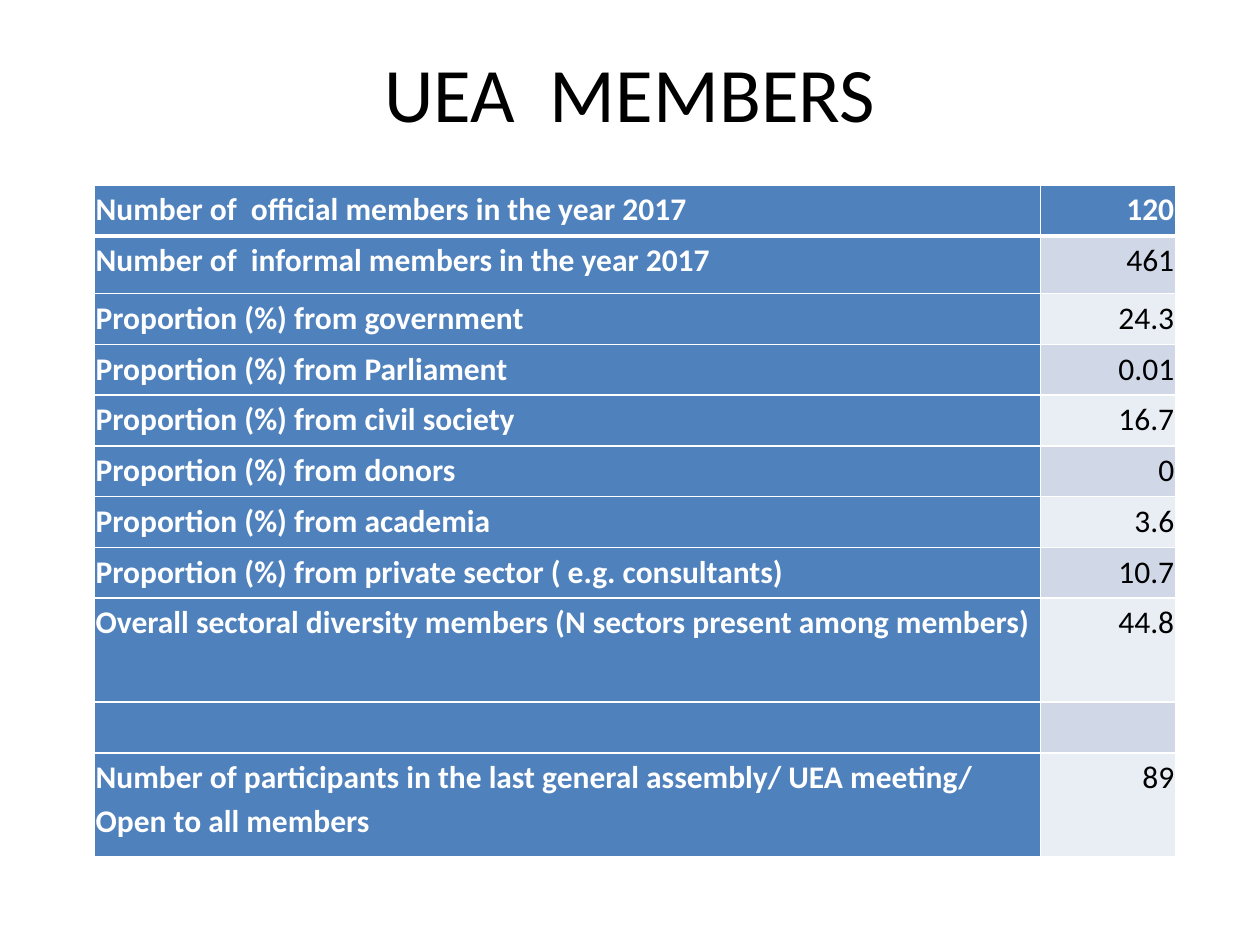
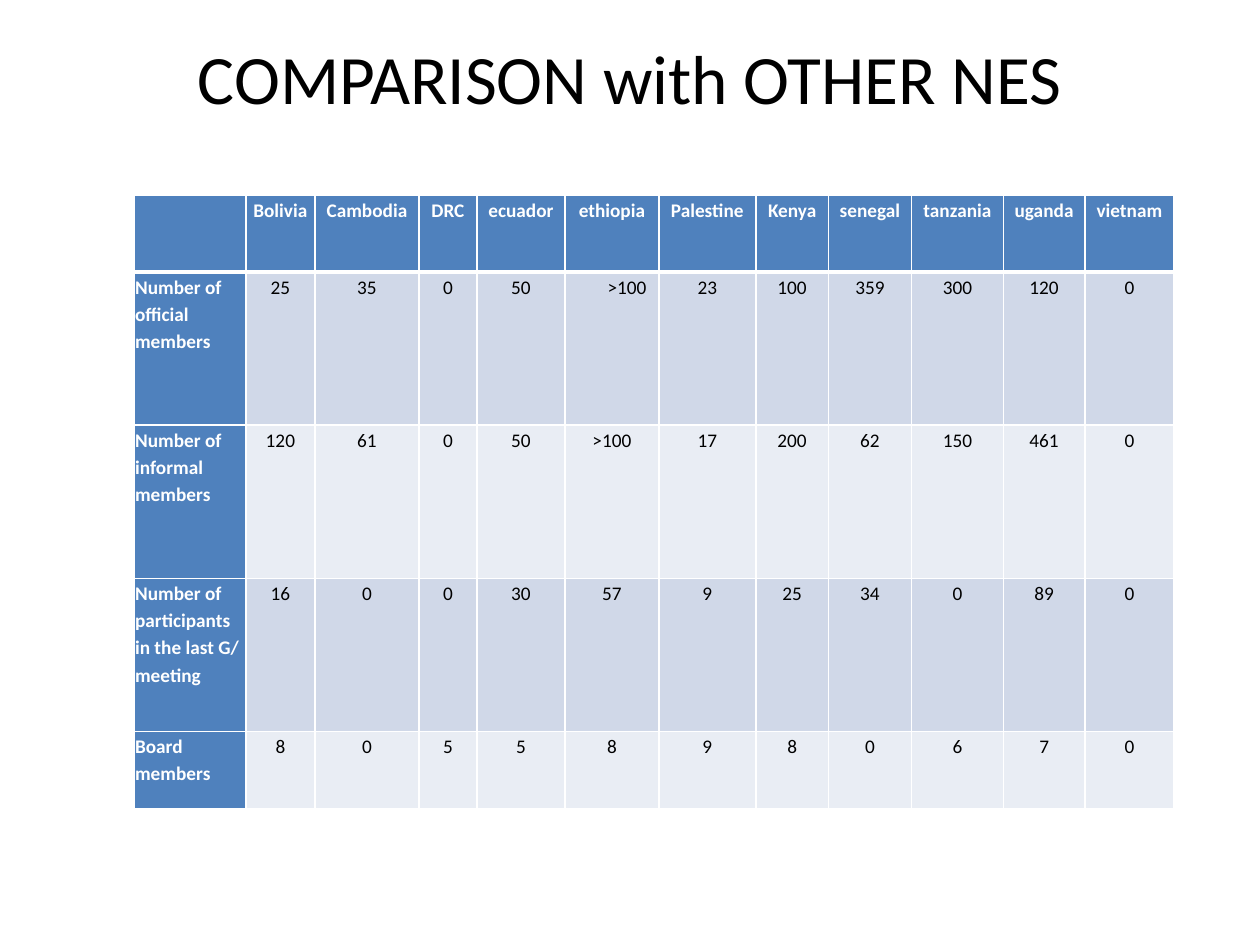
import dataclasses

import lxml.etree
import pptx
import pptx.dml.color
import pptx.enum.text
import pptx.oxml.ns
import pptx.util

Pt = pptx.util.Pt
ALIGN = pptx.enum.text.PP_ALIGN


@dataclasses.dataclass(frozen=True)
class Theme:
    font: str = "Calibri"
    ink: str = "000000"
    paper: str = "FFFFFF"
    heading_fill: str = "4F81BD"
    bands: tuple = ("D0D8E8", "E9EDF4")
    title_size: float = 44
    long_title_size: float = 39.6
    members_size: float = 18
    comparison_size: float = 11
    rule: float = 1
    header_rule: float = 3
    cell_inset: float = 0.7
    line_spacing: float = 1.15
    space_after: float = 10


def rgb(value):
    return pptx.dml.color.RGBColor.from_string(value)


def put_text(frame, text, *, font, size, color, bold=False, align=ALIGN.LEFT,
             line_spacing=None, space_after=None):
    paragraph = frame.paragraphs[0]
    paragraph.alignment = align
    paragraph.line_spacing = line_spacing
    if space_after is not None:
        paragraph.space_after = Pt(space_after)
    run = paragraph.add_run()
    run.text = text
    run.font.name = font
    run.font.size = Pt(size)
    run.font.bold = bold
    run.font.color.rgb = rgb(color)


class Deck:
    def __init__(self, theme):
        self.theme = theme
        self.presentation = pptx.Presentation()
        self.presentation.slide_width = Pt(720)
        self.presentation.slide_height = Pt(540)
        self.slide = None

    def add_slide(self, heading, size, height):
        layout = self.presentation.slide_layouts.get_by_name("Title Only")
        self.slide = self.presentation.slides.add_slide(layout)
        title = self.slide.shapes.title
        title.left, title.top = Pt(36), Pt(21.6)
        title.width, title.height = Pt(648), Pt(height)
        frame = title.text_frame
        frame.word_wrap = True
        frame.auto_size = pptx.enum.text.MSO_AUTO_SIZE.NONE
        frame.vertical_anchor = pptx.enum.text.MSO_ANCHOR.MIDDLE
        put_text(frame, heading, font=self.theme.font, size=size,
                 color=self.theme.ink, align=ALIGN.CENTER)

    def add_borders(self, cell, row):
        properties = cell._tc.get_or_add_tcPr()
        tag = pptx.oxml.ns.qn
        heavy = {0: "lnB", 1: "lnT"}.get(row)
        for side in ("lnL", "lnR", "lnT", "lnB"):
            weight = self.theme.header_rule if side == heavy else self.theme.rule
            line = lxml.etree.SubElement(properties, tag(f"a:{side}"), w=str(Pt(weight)))
            fill = lxml.etree.SubElement(line, tag("a:solidFill"))
            lxml.etree.SubElement(fill, tag("a:srgbClr"), val=self.theme.paper)

    def format_cell(self, cell, text, row, column, size, align):
        theme = self.theme
        heading = row == 0 or column == 0
        cell.margin_left = cell.margin_right = Pt(theme.cell_inset)
        cell.margin_top = cell.margin_bottom = Pt(0)
        self.add_borders(cell, row)
        cell.fill.solid()
        cell.fill.fore_color.rgb = rgb(
            theme.heading_fill if heading else theme.bands[(row - 1) % 2])
        if text:
            put_text(cell.text_frame, text, font=theme.font, size=size,
                     color=theme.paper if heading else theme.ink, bold=heading,
                     align=ALIGN.LEFT if column == 0 else align,
                     line_spacing=theme.line_spacing, space_after=theme.space_after)

    def add_table(self, records, left, top, widths, heights, size, align):
        table = self.slide.shapes.add_table(
            len(heights), len(widths), Pt(left), Pt(top),
            Pt(sum(widths)), Pt(sum(heights))).table
        for column, width in zip(table.columns, widths):
            column.width = Pt(width)
        for row, height in zip(table.rows, heights):
            row.height = Pt(height)
        for row, record in enumerate(records):
            for column, text in enumerate(record):
                self.format_cell(table.cell(row, column), text, row, column, size, align)
        return table


MEMBERS = [
    ("Number of  official members in the year 2017", "120"),
    ("Number of  informal members in the year 2017", "461"),
    ("Proportion (%) from government", "24.3"),
    ("Proportion (%) from Parliament", "0.01"),
    ("Proportion (%) from civil society", "16.7"),
    ("Proportion (%) from donors", "0"),
    ("Proportion (%) from academia", "3.6"),
    ("Proportion (%) from private sector ( e.g. consultants)", "10.7"),
    ("Overall sectoral diversity members (N sectors present among members)", "44.8"),
    ("", ""),
    ("Number of participants in the last general assembly/ UEA meeting/ "
     "Open to all members", "89"),
]

COMPARISON = [
    ("", "Bolivia", "Cambodia", "DRC", "ecuador", "ethiopia", "Palestine",
     "Kenya", "senegal", "tanzania", "uganda", "vietnam"),
    ("Number of official members", "25", "35", "0", "50", ">100", "23",
     "100", "359", "300", "120", "0"),
    ("Number of informal members", "120", "61", "0", "50", ">100", "17",
     "200", "62", "150", "461", "0"),
    ("Number of participants in the last G/ meeting", "16", "0", "0", "30", "57",
     "9", "25", "34", "0", "89", "0"),
    ("Board members", "8", "0", "5", "5", "8", "9", "8", "0", "6", "7", "0"),
]


def add_members(deck):
    deck.add_slide("UEA  MEMBERS", deck.theme.title_size, 61.2)
    heights = [29, 33] + [29] * 6 + [59.5, 29, 59.5]
    deck.add_table(MEMBERS, 54, 105.8, [540.7, 77], heights,
                   deck.theme.members_size, ALIGN.RIGHT)


def add_comparison(deck):
    deck.add_slide("COMPARISON with OTHER NES", deck.theme.long_title_size, 44)
    widths = [64, 39.5, 59.5, 33, 50.5, 53.5, 55.5, 41.5, 47.5, 52.5, 46.5, 51]
    heights = [44] + [87.5] * 3 + [44]
    table = deck.add_table(COMPARISON, 76.5, 111.5, widths, heights,
                           deck.theme.comparison_size, ALIGN.CENTER)
    ethiopia_official = table.cell(1, COMPARISON[0].index("ethiopia"))
    ethiopia_official.margin_right = Pt(7)
    ethiopia_official.text_frame.paragraphs[0].alignment = ALIGN.RIGHT


def main():
    deck = Deck(Theme())
    add_members(deck)
    add_comparison(deck)
    deck.presentation.save("out.pptx")


if __name__ == "__main__":
    main()
